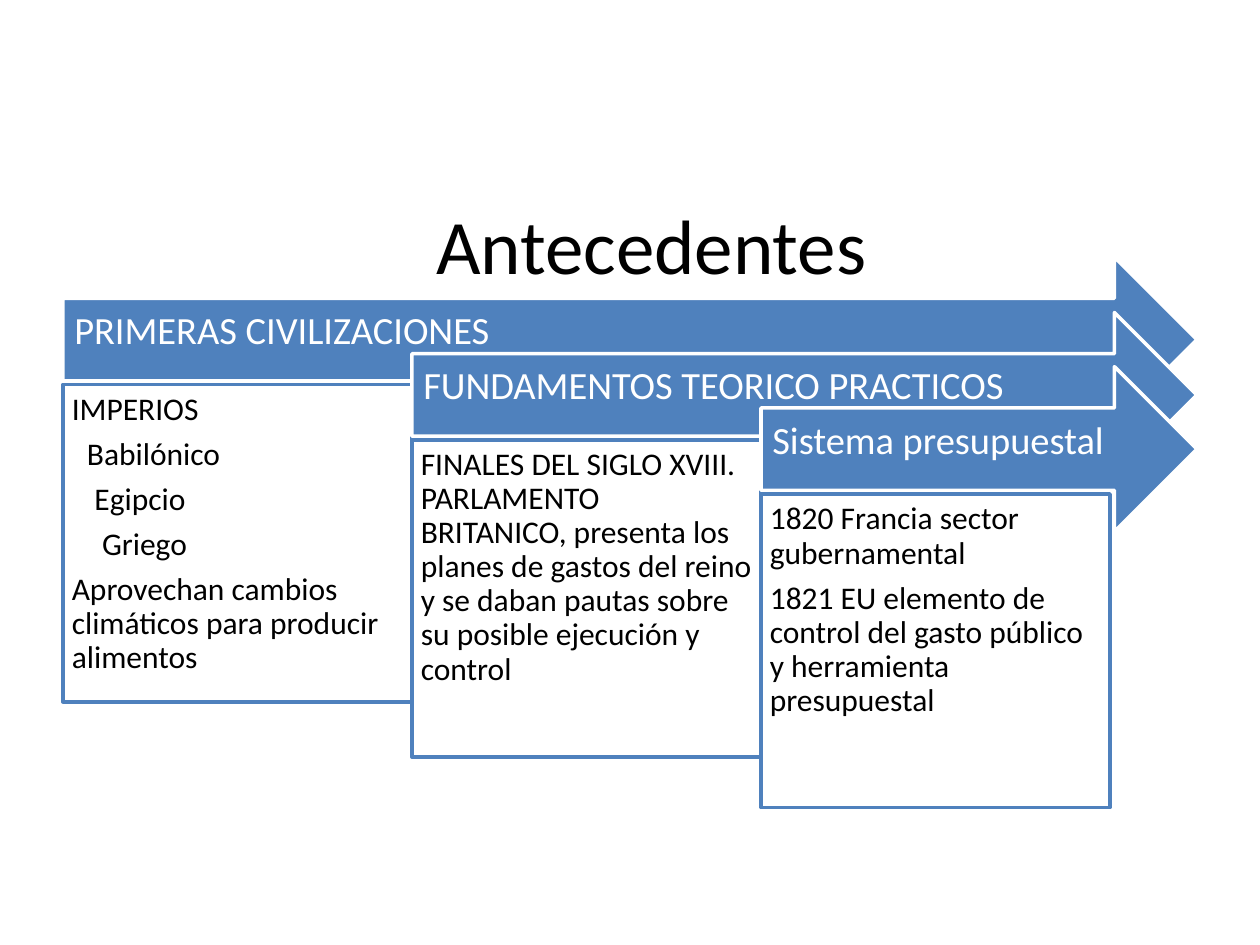
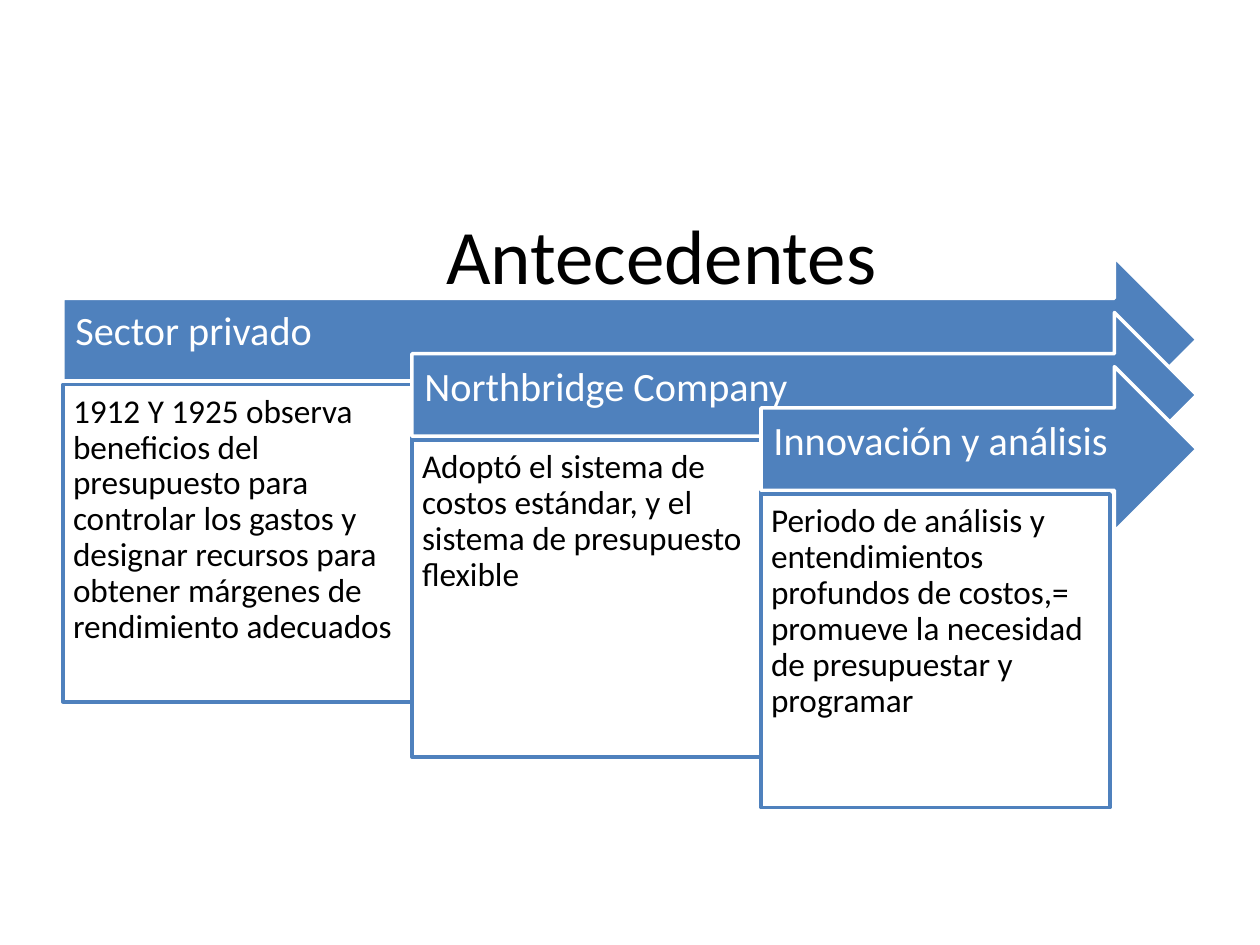
from pptx import Presentation
from pptx.dml.color import RGBColor
from pptx.enum.shapes import MSO_SHAPE as Shape
from pptx.enum.text import MSO_ANCHOR as Anchor, PP_ALIGN as Align
from pptx.util import Pt

PX = 9144  # 100 px to the inch
BLACK = RGBColor(0x00, 0x00, 0x00)
WHITE = RGBColor(0xFF, 0xFF, 0xFF)
BLUE = RGBColor(0x4F, 0x81, 0xBD)

FONT = "Calibri"
LEFT, RIGHT = 50, 950
ARROW_TOP, ARROW_HEIGHT = 204, 131
BOX_DROP = 101  # from the top of an arrow to its box
BOX_WIDTH, BOX_HEIGHTS = 277, (252, 252, 249)
INDENT_STEP = 6


class Canvas:
    """Holds the deck, the shared style and the slide being drawn."""

    def __init__(self):
        self.deck = Presentation()
        self.deck.slide_width, self.deck.slide_height = 1000 * PX, 750 * PX
        self.page = None

    def new_page(self):
        self.page = self.deck.slides.add_slide(self.deck.slide_layouts[6])

    def fill_text(self, frame, lines, size, color, anchor, insets):
        """Fill a frame with (indent, text) lines; insets are left, top, right, bottom."""
        frame.word_wrap = True
        frame.vertical_anchor = anchor
        (frame.margin_left, frame.margin_top,
         frame.margin_right, frame.margin_bottom) = [inset * PX for inset in insets]
        for number, (indent, text) in enumerate(lines):
            para = frame.add_paragraph() if number else frame.paragraphs[0]
            para.text = text
            para.alignment = Align.LEFT
            para.line_spacing = 0.9
            para.space_after = Pt(0.35 * size)
            if indent:
                para._p.get_or_add_pPr().set("marL", str(indent * INDENT_STEP * PX))
            font = para.runs[0].font
            font.name, font.size, font.color.rgb = FONT, Pt(size), color

    def title(self, text, left, top):
        box = self.page.shapes.add_textbox(left * PX, top * PX, 900 * PX, 125 * PX)
        self.fill_text(box.text_frame, [(0, text)], 44, BLACK, Anchor.MIDDLE,
                       (10, 5, 10, 5))
        para = box.text_frame.paragraphs[0]
        para.alignment = Align.CENTER
        para.line_spacing, para.space_after = 1.0, Pt(0)

    def shape(self, kind, left, top, width, height, fill, line):
        shape = self.page.shapes.add_shape(
            kind, left * PX, top * PX, width * PX, height * PX)
        shape.shadow.inherit = False
        shape.fill.solid()
        shape.fill.fore_color.rgb = fill
        shape.line.color.rgb = line
        shape.line.width = Pt(2)
        return shape

    def arrow(self, text, left, top, size, inset):
        arrow = self.shape(Shape.RIGHT_ARROW, left, top, RIGHT - left, ARROW_HEIGHT,
                           BLUE, WHITE)
        self.fill_text(arrow.text_frame, [(0, text)], size, WHITE, Anchor.MIDDLE,
                       (inset, inset, 28, 21))

    def detail_box(self, lines, left, top, height, size, inset):
        box = self.shape(Shape.RECTANGLE, left, top, BOX_WIDTH, height, WHITE, BLUE)
        self.fill_text(box.text_frame, lines, size, BLACK, Anchor.TOP, (inset,) * 4)

    def stages(self, stages, arrow_size, box_size, arrow_inset, box_inset):
        """Draw the staircase of arrows, each with its detail box below."""
        for step, ((heading, lines), height) in enumerate(zip(stages, BOX_HEIGHTS)):
            left = LEFT + step * BOX_WIDTH
            top = ARROW_TOP + (87 * step + 1) // 2
            self.arrow(heading, left, top, arrow_size, arrow_inset)
            self.detail_box(lines, left, top + BOX_DROP, height, box_size, box_inset)


ORIGINS = [
    ("PRIMERAS CIVILIZACIONES", [
        (0, "IMPERIOS"),
        (2, "Babilónico"),
        (3, "Egipcio"),
        (4, "Griego"),
        (0, "Aprovechan cambios climáticos para producir alimentos")]),
    ("FUNDAMENTOS TEORICO PRACTICOS", [
        (0, "FINALES DEL SIGLO XVIII. PARLAMENTO BRITANICO, presenta los planes de "
            "gastos del reino y se daban pautas sobre su posible ejecución y control")]),
    ("Sistema presupuestal", [
        (0, "1820 Francia sector gubernamental"),
        (0, "1821 EU elemento de control del gasto público y herramienta presupuestal")]),
]
PRIVATE_SECTOR = [
    ("Sector privado", [
        (0, "1912 Y 1925 observa beneficios del presupuesto para controlar los gastos y "
            "designar recursos para obtener márgenes de rendimiento adecuados")]),
    ("Northbridge Company", [
        (0, "Adoptó el sistema de costos estándar, y el sistema de presupuesto flexible")]),
    ("Innovación y análisis", [
        (0, "Periodo de análisis y entendimientos profundos de costos,= promueve la "
            "necesidad de presupuestar y programar")]),
]


def main():
    canvas = Canvas()

    canvas.new_page()
    canvas.title("Antecedentes", 67, 131)
    canvas.stages(ORIGINS, arrow_size=22, box_size=18, arrow_inset=9, box_inset=7)

    canvas.new_page()
    canvas.title("Antecedentes", 75, 139)
    canvas.stages(PRIVATE_SECTOR, arrow_size=23, box_size=19, arrow_inset=10, box_inset=8)

    canvas.deck.save("out.pptx")


if __name__ == "__main__":
    main()
